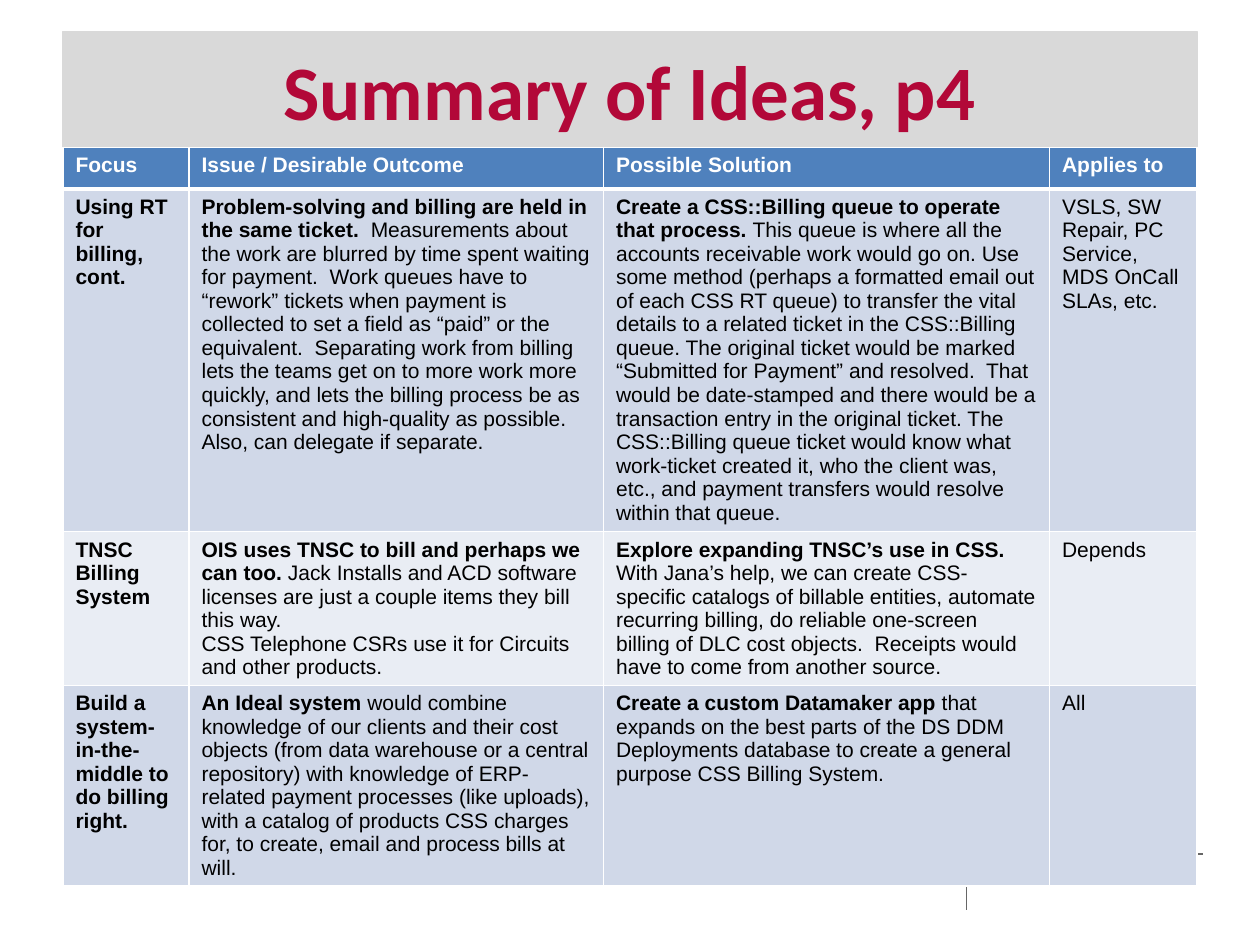
from lxml import etree
from pptx import Presentation
from pptx.dml.color import RGBColor
from pptx.enum.shapes import MSO_CONNECTOR as Conn, MSO_SHAPE as Shape
from pptx.enum.text import MSO_ANCHOR as Anchor, PP_ALIGN as Align
from pptx.oxml import parse_xml
from pptx.oxml.ns import nsdecls, qn
from pptx.util import Inches, Pt


def color(code):
    return RGBColor.from_string(code)


def write(frame, text, size=12, font="Arial", ink="000000", align=Align.LEFT):
    """Fill a frame; ** switches bold on and off, a newline breaks the line."""
    para = frame.paragraphs[0]
    para.alignment = align
    for i, part in enumerate(text.split("**")):
        for j, line in enumerate(part.split("\n")):
            if j:
                para.add_line_break()
            if line:
                run = para.add_run()
                run.text = line
                run.font.size = Pt(size)
                run.font.name = font
                run.font.bold = i % 2 == 1
                run.font.color.rgb = color(ink)


deck = Presentation()
deck.slide_width, deck.slide_height = Inches(10), Inches(7.5)
slide = deck.slides.add_slide(deck.slide_layouts[6])

# Footer rules, behind the table
for ends in [(0.5, 6.78, 9.55, 6.78), (7.67, 7.22, 7.67, 6.9)]:
    rule = slide.shapes.add_connector(Conn.STRAIGHT, *map(Inches, ends))
    rule.line.color.rgb = color("666666")
    rule.line.width = Pt(1)
    etree.SubElement(rule._element.spPr, qn("a:effectLst"))

# Title band
title = slide.shapes.add_shape(
    Shape.RECTANGLE, Inches(0.5), Inches(0.25), Inches(9), Inches(0.92))
title.shadow.inherit = False
title.fill.solid()
title.fill.fore_color.rgb = color("D9D9D9")
title.line.color.rgb = color("D9D9D9")
title.line.width = Pt(0.75)
title.text_frame.word_wrap = True
title.text_frame.vertical_anchor = Anchor.MIDDLE
write(title.text_frame, "**Summary of Ideas, p4**", size=44, font="Calibri",
      ink="B20838", align=Align.CENTER)

# Table of ideas
rows = [
    ["**Focus**", "**Issue / Desirable Outcome**", "**Possible Solution**",
     "**Applies to**"],
    ["**Using RT for billing, cont.**",
     "**Problem-solving and billing are held in the same ticket.**  "
     "Measurements about the work are blurred by time spent waiting for "
     "payment.  Work queues have to “rework” tickets when payment is "
     "collected to set a field as “paid” or the equivalent.  Separating work "
     "from billing lets the teams get on to more work more quickly, and lets "
     "the billing process be as consistent and high-quality as possible.  "
     "Also, can delegate if separate.",
     "**Create a CSS::Billing queue to operate that process. **This queue is "
     "where all the accounts receivable work would go on. Use some method "
     "(perhaps a formatted email out of each CSS RT queue) to transfer the "
     "vital details to a related ticket in the CSS::Billing queue. The "
     "original ticket would be marked “Submitted for Payment” and resolved.  "
     "That would be date-stamped and there would be a transaction entry in "
     "the original ticket. The CSS::Billing queue ticket would know what "
     "work-ticket created it, who the client was, etc., and payment transfers "
     "would resolve within that queue.",
     "VSLS, SW Repair, PC Service, MDS OnCall SLAs, etc."],
    ["**TNSC Billing System**",
     "**OIS uses TNSC to bill and perhaps we can too. **Jack Installs and ACD "
     "software licenses are just a couple items they bill this way.\n"
     "CSS Telephone CSRs use it for Circuits and other products.",
     "**Explore expanding TNSC’s use in CSS.\n**With Jana’s help, we can "
     "create CSS-specific catalogs of billable entities, automate recurring "
     "billing, do reliable one-screen billing of DLC cost objects.  Receipts "
     "would have to come from another source.",
     "Depends"],
    ["**Build a system-in-the-middle to do billing right.**",
     "**An Ideal system **would combine knowledge of our clients and their "
     "cost objects (from data warehouse or a central repository) with "
     "knowledge of ERP-related payment processes (like uploads), with a "
     "catalog of products CSS charges for, to create, email and process bills "
     "at will.",
     "**Create a custom Datamaker app **that expands on the best parts of the "
     "DS DDM Deployments database to create a general purpose CSS Billing "
     "System.",
     "All"],
]
widths = [1, 3.29, 3.54, 1.17]
heights = [0.33, 2.72, 1.22, 1.59]
fills = ["4F81BD", "D0D8E8", "E9EDF4", "D0D8E8"]

table = slide.shapes.add_table(
    len(rows), len(widths), Inches(0.5), Inches(1.17),
    Inches(sum(widths)), Inches(sum(heights))).table
for col, width in zip(table.columns, widths):
    col.width = Inches(width)
for r, texts in enumerate(rows):
    table.rows[r].height = Inches(heights[r])
    for c, text in enumerate(texts):
        cell = table.cell(r, c)
        write(cell.text_frame, text, ink="000000" if r else "FFFFFF")
        props = cell._tc.get_or_add_tcPr()
        for side in "LRTB":
            thick = 3 if (r, side) in [(0, "B"), (1, "T")] else 1
            props.append(parse_xml(
                f'<a:ln{side} {nsdecls("a")} w="{Pt(thick)}"><a:solidFill>'
                f'<a:srgbClr val="FFFFFF"/></a:solidFill></a:ln{side}>'))
        cell.fill.solid()
        cell.fill.fore_color.rgb = color(fills[r])

deck.save("out.pptx")
